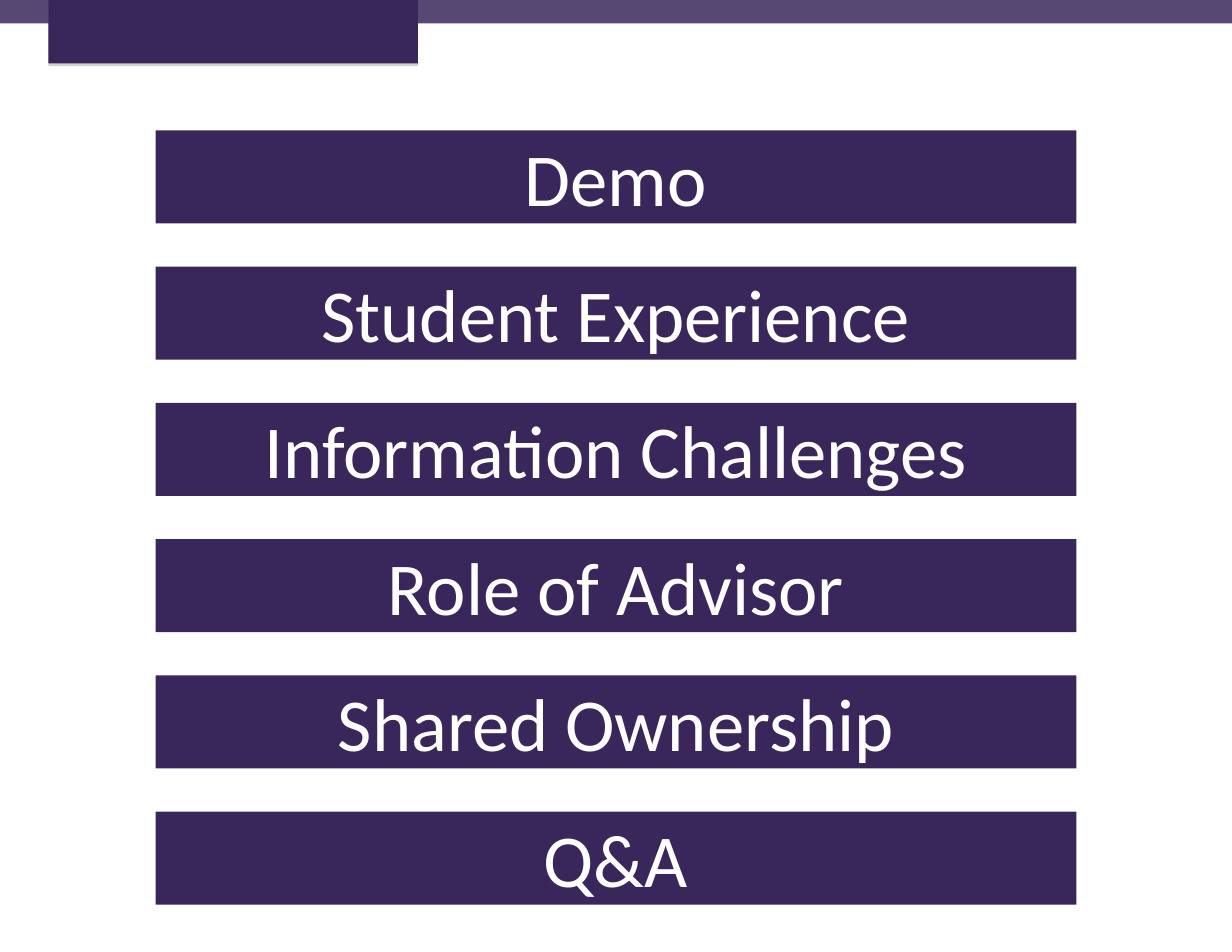
from lxml import etree
from pptx import Presentation
from pptx.dml.color import RGBColor
from pptx.enum.shapes import MSO_SHAPE
from pptx.enum.text import MSO_ANCHOR, PP_ALIGN
from pptx.oxml.ns import qn
from pptx.util import Cm, Pt

RECT = MSO_SHAPE.RECTANGLE
BOTTOM = MSO_ANCHOR.BOTTOM
CENTER = PP_ALIGN.CENTER

TOPICS = [
    "Demo",
    "Student Experience",
    "Information Challenges",
    "Role of Advisor",
    "Shared Ownership",
    "Q&A",
]
PURPLE, WHITE, GRAY = "39275B", "FFFFFF", "808080"
SLIDE_W, SLIDE_H = 27.94, 21.59
BAR_W, BAR_H = 20.88, 2.11
BAR_TOP, BAR_STEP = 2.96, 3.09
FRAME = {"word_wrap": True, "vertical_anchor": BOTTOM,
         "margin_top": 0, "margin_bottom": Cm(0.05)}
FONT = {"name": "Calibri", "size": Pt(48)}


def rgb(value):
    return RGBColor.from_string(value)


def set_format(target, values):
    for name, value in values.items():
        setattr(target, name, value)


def add_rect(s, left, top, width, height):
    sp = s.shapes.add_shape(RECT, Cm(left), Cm(top), Cm(width), Cm(height))
    sp.shadow.inherit = False
    sp.fill.solid()
    sp.fill.fore_color.rgb = rgb(PURPLE)
    sp.line.fill.background()
    return sp


def add_alpha(color, percent):
    etree.SubElement(color, qn("a:alpha"), val=str(percent * 1000))


def add_shadow(sp):
    effects = sp._element.spPr.find(qn("a:effectLst"))
    shadow = etree.SubElement(effects, qn("a:outerShdw"), blurRad="0",
                              dist=str(Pt(1.8)), dir="5400000", rotWithShape="0")
    add_alpha(etree.SubElement(shadow, qn("a:srgbClr"), val=GRAY), 35)


def add_bar(s, text, top):
    sp = add_rect(s, (SLIDE_W - BAR_W) / 2, top, BAR_W, BAR_H)
    tf = sp.text_frame
    set_format(tf, FRAME)
    p = tf.paragraphs[0]
    p.alignment = CENTER
    r = p.add_run()
    r.text = text
    set_format(r.font, FONT)
    r.font.color.rgb = rgb(WHITE)


def main():
    prs = Presentation()
    prs.slide_width, prs.slide_height = Cm(SLIDE_W), Cm(SLIDE_H)
    s = prs.slides.add_slide(prs.slide_layouts[6])
    s.background.fill.solid()
    s.background.fill.fore_color.rgb = rgb(WHITE)

    band = add_rect(s, 0, 0, SLIDE_W, 0.53)
    add_alpha(band._element.spPr.find(qn("a:solidFill"))[0], 85)
    tab = add_rect(s, 1.1, 0, 8.38, 1.44)
    add_shadow(tab)

    for i, topic in enumerate(TOPICS):
        add_bar(s, topic, BAR_TOP + i * BAR_STEP)
    prs.save("out.pptx")


if __name__ == "__main__":
    main()
